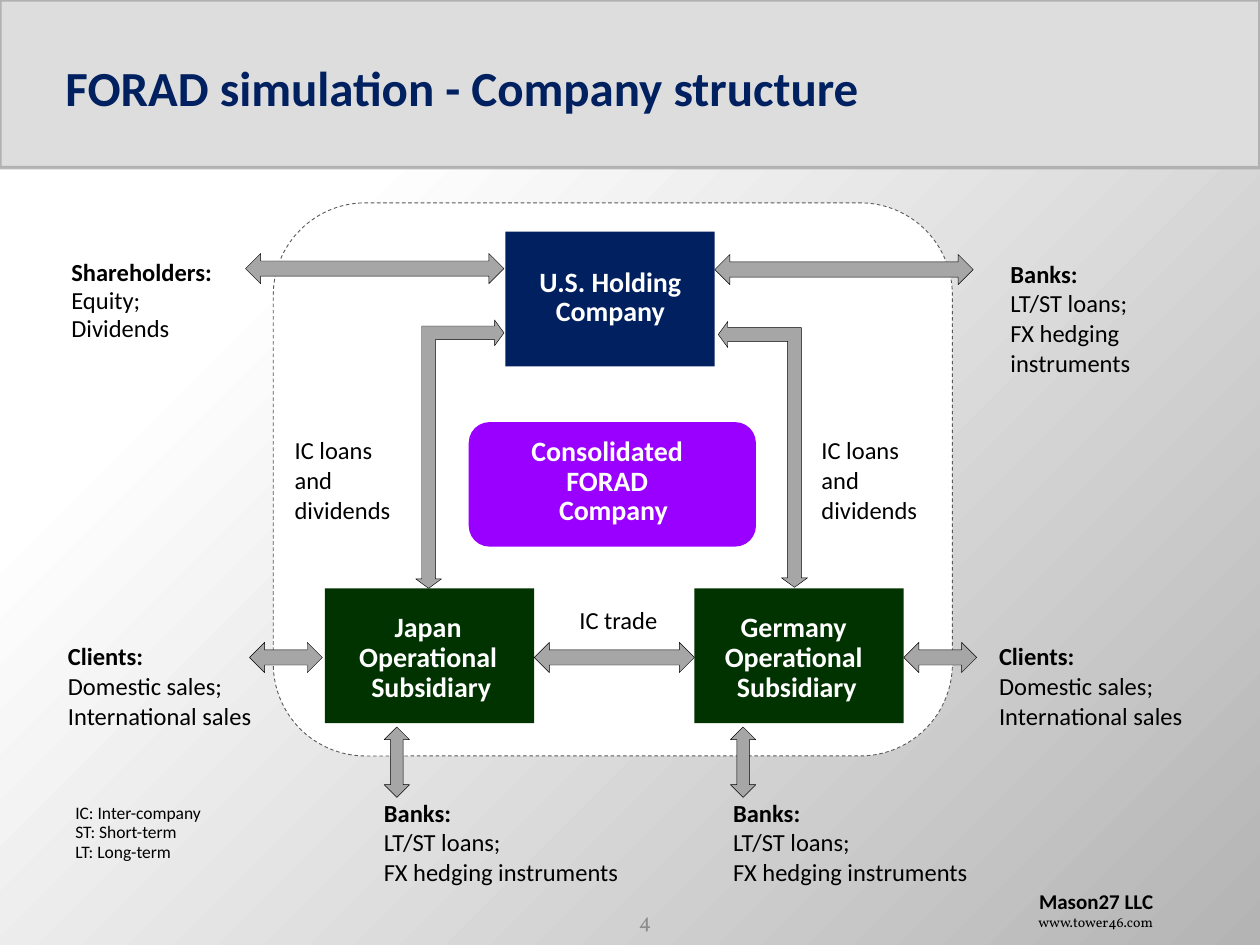
from lxml import etree
from pptx import Presentation
from pptx.dml.color import RGBColor
from pptx.enum.dml import MSO_LINE
from pptx.enum.shapes import MSO_SHAPE as Shape
from pptx.enum.text import MSO_ANCHOR as Anchor, MSO_AUTO_SIZE as AutoSize, PP_ALIGN as Align
from pptx.oxml import parse_xml
from pptx.oxml.ns import nsdecls, qn
from pptx.util import Cm, Pt

COLORS = {
    "white": "FFFFFF", "black": "000000", "navy": "002060", "green": "003300",
    "purple": "9900FF", "header": "DDDDDD", "arrow": "A6A6A6",
    "dash": "595959", "number": "8C8C8C", "shade": "B4B4B4",
}

BOX_WIDTH, BOX_HEIGHT = 4.22, 2.72
TOP_ROW, BOTTOM_ROW = 4.67, 11.86
HOLDING_LEFT, JAPAN_LEFT, GERMANY_LEFT = 10.19, 6.55, 14.0
TRADE_TOP = 12.95
ARROW_HEIGHT = 0.61
BANK_ARROW = (1.42, 0.51)
BENT_ADJUSTMENTS = (0.155, 0.146, 0.107)

COMPANIES = [
    (HOLDING_LEFT, TOP_ROW, "navy"),
    (JAPAN_LEFT, BOTTOM_ROW, "green"),
    (GERMANY_LEFT, BOTTOM_ROW, "green"),
]
COMPANY_LABELS = [
    (10.21, 5.28, 1.83, ["U.S. Holding Company"]),
    (6.6, 12.24, 2.57, ["Japan ", "Operational ", "Subsidiary"]),
    (13.97, 12.24, 2.57, ["Germany ", "Operational ", "Subsidiary"]),
    (10.21, 8.69, 2.54, ["Consolidated ", "FORAD ", " Company"]),
]

HORIZONTAL_ARROWS = [
    (4.95, 5.11, 5.21),
    (HOLDING_LEFT + BOX_WIDTH, 5.13, 5.21),
    (JAPAN_LEFT + BOX_WIDTH, TRADE_TOP, GERMANY_LEFT - JAPAN_LEFT - BOX_WIDTH),
    (GERMANY_LEFT + BOX_WIDTH, TRADE_TOP, 1.47),
    (5.03, TRADE_TOP, 1.47),
]
BANK_ARROW_LEFTS = [7.29, 14.27]
BENT_ARROWS = [
    ((8.38, 6.45, 1.78, 5.41), 180),
    ((12.7, 8.26, 5.36, 1.8), 270),
]

BANKS = ["Banks:|", "LT/ST loans;", "FX hedging instruments"]
CLIENTS = ["Clients:|", "Domestic sales;", "International sales"]
LOANS = ["IC loans and dividends"]
NOTES = [
    ((20.12, 5.08, 4.11, 2.9), BANKS, {}),
    ((14.53, 15.95, 5.56, 2.9), BANKS, {}),
    ((7.49, 15.95, 5.61, 2.9), BANKS, {}),
    ((19.89, 12.8, 5.03, 3.07), CLIENTS, {}),
    ((1.12, 12.8, 5.03, 3.07), CLIENTS, {}),
    ((5.69, 8.64, 2.77, 2.57), LOANS, {}),
    ((16.31, 8.64, 2.77, 2.57), LOANS, {}),
    ((1.19, 5.08, 3.61, 2.72), ["Shareholders: |Equity;", "Dividends"], {"spacing": 16}),
    ((11.43, 12.07, 2.44, 0.89), ["IC trade"], {"spacing": None}),
    ((1.27, 16.08, 3.61, 2.01),
     ["IC: Inter-company", "ST: Short-term", "LT: Long-term"], {"size": 10, "spacing": 11}),
]


def rgb(name):
    return RGBColor.from_string(COLORS[name])


def add_shape(slide, kind, place, fill, line=None, width=0.25, rotation=0):
    shape = slide.shapes.add_shape(kind, *map(Cm, place))
    shape.shadow.inherit = False
    shape.rotation = rotation
    shape.fill.solid()
    shape.fill.fore_color.rgb = rgb(fill)
    if line:
        shape.line.color.rgb = rgb(line)
        shape.line.width = Pt(width)
    else:
        shape.line.fill.background()
    return shape


def add_text(slide, place, lines, size=14, color="black", bold=False, font="Calibri",
             align=Align.LEFT, anchor=Anchor.TOP, spacing=17):
    box = slide.shapes.add_textbox(*map(Cm, place))
    frame = box.text_frame
    frame.word_wrap = True
    frame.vertical_anchor = anchor
    for index, line in enumerate(lines):
        paragraph = frame.paragraphs[0] if index == 0 else frame.add_paragraph()
        paragraph.alignment = align
        if spacing:
            paragraph.line_spacing = Pt(spacing)
        heading, _, body = line.rpartition("|")
        for text, is_bold in ((heading, True), (body, bold)):
            if text:
                run = paragraph.add_run()
                run.text = text
                run.font.size = Pt(size)
                run.font.name = font
                run.font.bold = is_bold
                run.font.color.rgb = rgb(color)
    return frame


def set_background(slide):
    properties = parse_xml(
        f'<p:bg {nsdecls("p", "a")}><p:bgPr><a:gradFill rotWithShape="1"><a:gsLst>'
        f'<a:gs pos="24000"><a:srgbClr val="{COLORS["white"]}"/></a:gs>'
        f'<a:gs pos="100000"><a:srgbClr val="{COLORS["shade"]}"/></a:gs></a:gsLst>'
        '<a:path path="circle"><a:fillToRect r="100000" b="100000"/></a:path>'
        '</a:gradFill><a:effectLst/></p:bgPr></p:bg>')
    slide.element.cSld.insert(0, properties)


def add_header(slide):
    header = add_shape(slide, Shape.RECTANGLE, (0, 0, 25.4, 3.38), "header", "arrow", 2)
    line_color = header.line._ln.find(".//" + qn("a:srgbClr"))
    etree.SubElement(line_color, qn("a:alpha")).set("val", "78000")
    add_text(slide, (1.07, 0.76, 22.86, 1.98), ["FORAD simulation - Company structure"],
             size=28, color="navy", bold=True, anchor=Anchor.MIDDLE, spacing=None)


def add_footer(slide):
    frame = add_text(slide, (20.32, 17.78, 3.18, 1.12), ["Mason27 LLC|", "www.tower46.com"],
                     size=12, align=Align.RIGHT, spacing=None)
    frame.auto_size = AutoSize.SHAPE_TO_FIT_TEXT
    address = frame.paragraphs[1].runs[0].font
    address.size, address.name = Pt(8), "Vollkorn"
    add_text(slide, (12.01, 18.03, 1.37, 1.02), ["4"], size=12, color="number",
             font="Vollkorn", align=Align.RIGHT, anchor=Anchor.MIDDLE, spacing=None)


def add_diagram(slide):
    group_frame = add_shape(slide, Shape.ROUNDED_RECTANGLE, (5.51, 4.09, 13.69, 11.15),
                            "white", "dash", 0.5)
    group_frame.line.dash_style = MSO_LINE.DASH
    add_shape(slide, Shape.ROUNDED_RECTANGLE, (9.45, 8.51, 5.79, 2.51), "purple")
    for left, top, fill in COMPANIES:
        add_shape(slide, Shape.RECTANGLE, (left, top, BOX_WIDTH, BOX_HEIGHT), fill)
    for left, top, width in HORIZONTAL_ARROWS:
        add_shape(slide, Shape.LEFT_RIGHT_ARROW, (left, top, width, ARROW_HEIGHT),
                  "arrow", "black")
    for left in BANK_ARROW_LEFTS:
        add_shape(slide, Shape.LEFT_RIGHT_ARROW, (left, 15.11, *BANK_ARROW),
                  "arrow", "black", rotation=90)
    for place, rotation in BENT_ARROWS:
        arrow = add_shape(slide, Shape.LEFT_UP_ARROW, place, "arrow", "black", rotation=rotation)
        for index, value in enumerate(BENT_ADJUSTMENTS):
            arrow.adjustments[index] = value
    for left, top, height, lines in COMPANY_LABELS:
        add_text(slide, (left, top, 4.19, height), lines, size=16, color="white",
                 bold=True, align=Align.CENTER)
    for place, lines, options in NOTES:
        add_text(slide, place, lines, **options)


def main():
    presentation = Presentation()
    presentation.slide_width, presentation.slide_height = Cm(25.4), Cm(19.05)
    slide = presentation.slides.add_slide(presentation.slide_layouts[6])
    set_background(slide)
    add_header(slide)
    add_footer(slide)
    add_diagram(slide)
    presentation.save("out.pptx")


if __name__ == "__main__":
    main()
